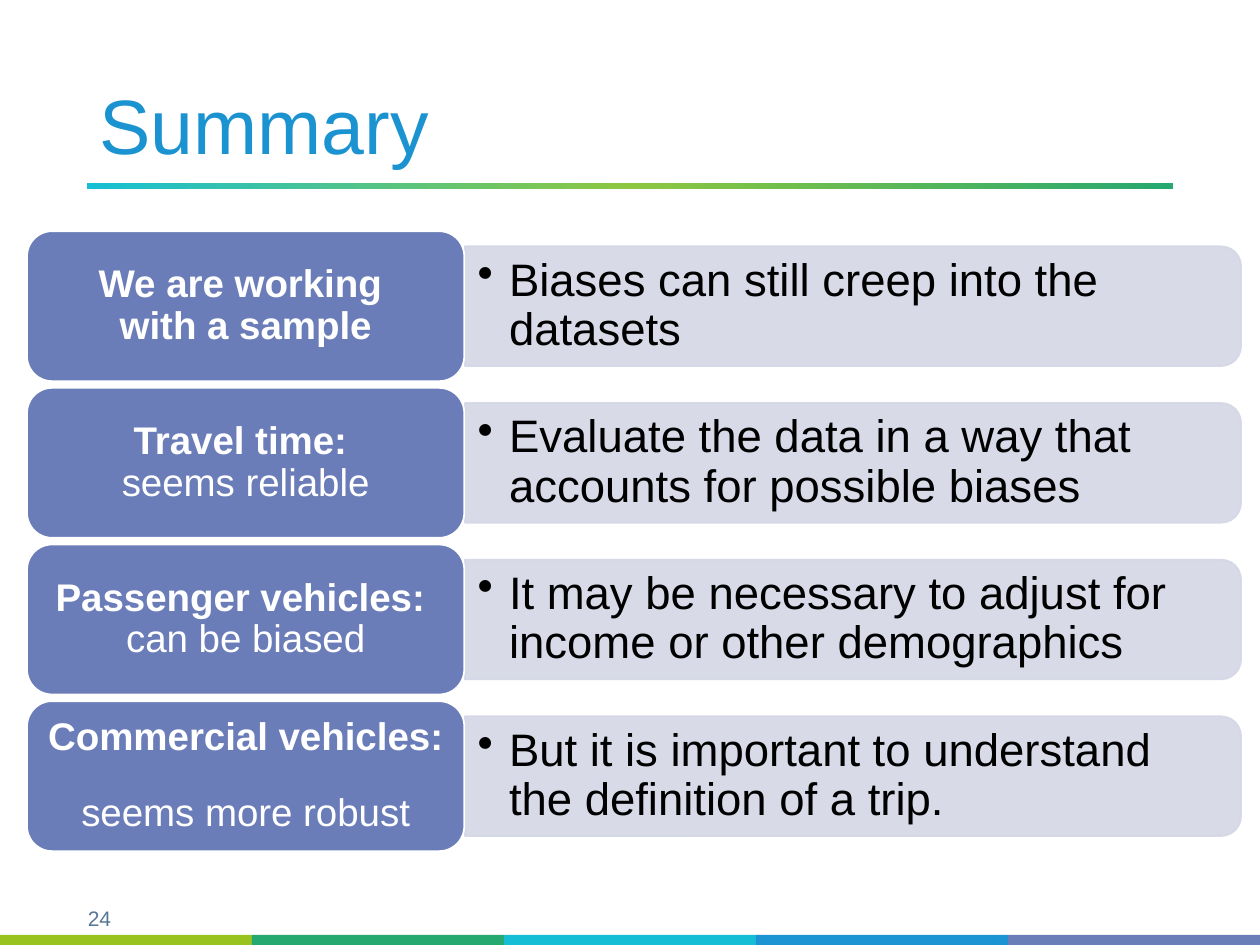
"""Build the summary slide of four labelled points."""
import copy
from typing import NamedTuple

import lxml.etree
import pptx
import pptx.dml.color
import pptx.enum.shapes
import pptx.enum.text
import pptx.oxml.ns
import pptx.util

Inches = pptx.util.Inches
Pt = pptx.util.Pt
Kind = pptx.enum.shapes.MSO_SHAPE
Align = pptx.enum.text.PP_ALIGN
Anchor = pptx.enum.text.MSO_ANCHOR
qn = pptx.oxml.ns.qn

COLORS = {
    "title": "1C93D1", "page": "597794", "label": "6B7DB8", "bar": "D4D7E6",
    "white": "FFFFFF", "black": "000000", "cyan": "16BFD4", "leaf": "8DC73F",
    "green": "26A871", "lime": "98C31F", "aqua": "16BED5", "blue": "1C93D2",
    "violet": "6B7DB9",
}
STRIPES = ("lime", "green", "aqua", "blue", "violet")
MID = 2.43
STEP = 3.73 / 3


class Row(NamedTuple):
    head: str
    tail: str
    bold: bool
    point: str


class Box(NamedTuple):
    left: float
    top: float
    width: float
    height: float


ROWS = (
    Row("We are working ", "with a sample", True,
        "Biases can still creep into the datasets"),
    Row("Travel time: ", "seems reliable", False,
        "Evaluate the data in a way that accounts for possible biases"),
    Row("Passenger vehicles: ", "can be biased", False,
        "It may be necessary to adjust for income or other demographics"),
    Row("Commercial vehicles: ", "seems more robust", False,
        "But it is important to understand the definition of a trip."),
)


def rgb(name: str):
    return pptx.dml.color.RGBColor.from_string(COLORS[name])


def inches(box: Box):
    return [Inches(side) for side in box]


def center(mid_x: float, mid_y: float, width: float, height: float) -> Box:
    return Box(mid_x - width / 2, mid_y - height / 2, width, height)


def add_shape(slide, kind, box: Box, fill: str, line: str = "", alpha: int = 100):
    shape = slide.shapes.add_shape(kind, *inches(box))
    shape.shadow.inherit = False
    shape.fill.solid()
    shape.fill.fore_color.rgb = rgb(fill)
    if line:
        shape.line.color.rgb = rgb(line)
        shape.line.width = Pt(1)
    else:
        shape.line.fill.background()
    if alpha < 100:
        for color in shape.element.spPr.iter(qn("a:srgbClr")):
            lxml.etree.SubElement(color, qn("a:alpha"), val=str(alpha * 1000))
    return shape


def add_text(slide, box: Box, *parts: tuple[str, bool], size: int, color: str,
             align=Align.LEFT, anchor=Anchor.MIDDLE, side: float = 0.1,
             space: float = 0.9, bullet: bool = False):
    frame = slide.shapes.add_textbox(*inches(box)).text_frame
    frame.word_wrap = True
    frame.vertical_anchor = anchor
    frame.margin_left = frame.margin_right = Inches(side)
    para = frame.paragraphs[0]
    para.alignment = align
    para.line_spacing = space
    if bullet:
        props = para._p.get_or_add_pPr()
        props.set("marL", str(Inches(0.25)))
        props.set("indent", str(Inches(-0.25)))
        lxml.etree.SubElement(props, qn("a:buChar"), char="•")
    for index, (text, bold) in enumerate(parts):
        if index:
            para.add_line_break()
        run = para.add_run()
        run.text = text
        run.font.name = "Arial"
        run.font.size = Pt(size)
        run.font.bold = bold
        run.font.color.rgb = rgb(color)


def add_rule(slide, box: Box, names: tuple[str, ...]):
    shape = add_shape(slide, Kind.RECTANGLE, box, names[0])
    shape.fill.gradient()
    shape.fill.gradient_angle = 0
    stops = shape.element.spPr.find(".//" + qn("a:gsLst"))
    stops.insert(1, copy.deepcopy(stops[0]))
    for index, stop in enumerate(shape.fill.gradient_stops):
        stop.position = index / (len(names) - 1)
        stop.color.rgb = rgb(names[index])


def add_row(slide, row: Row, mid: float):
    bar = add_shape(slide, Kind.ROUND_2_SAME_RECTANGLE,
                    center(6.77, mid, 0.95, 6.16), "bar", "bar", 90)
    bar.rotation = 90
    add_text(slide, center(6.74, mid, 6.12, 0.86), (row.point, False),
             size=26, color="black", side=0.11, bullet=True)
    add_shape(slide, Kind.ROUNDED_RECTANGLE,
              center(1.95, mid, 3.47, 1.19), "label", "white")
    add_text(slide, center(1.95, mid, 3.35, 1.07), (row.head, True),
             (row.tail, row.bold), size=22, color="white",
             align=Align.CENTER, side=0.09)


def main():
    deck = pptx.Presentation()
    deck.slide_width, deck.slide_height = Inches(10), Inches(7.5)
    slide = deck.slides.add_slide(deck.slide_layouts[6])
    add_text(slide, Box(0.55, 7.14, 0.48, 0.3), ("24", False), size=12,
             color="page", align=Align.CENTER, anchor=Anchor.TOP, space=1.0)
    add_rule(slide, Box(0.69, 1.45, 8.62, 0.05), ("cyan", "leaf", "green"))
    for index, name in enumerate(STRIPES):
        add_shape(slide, Kind.RECTANGLE, Box(2 * index, 7.42, 2, 0.1), name)
    add_text(slide, Box(0.69, 0.11, 8.62, 1.3), ("Summary", False), size=44,
             color="title", anchor=Anchor.BOTTOM)
    for index, row in enumerate(ROWS):
        add_row(slide, row, MID + index * STEP)
    deck.save("out.pptx")


if __name__ == "__main__":
    main()
